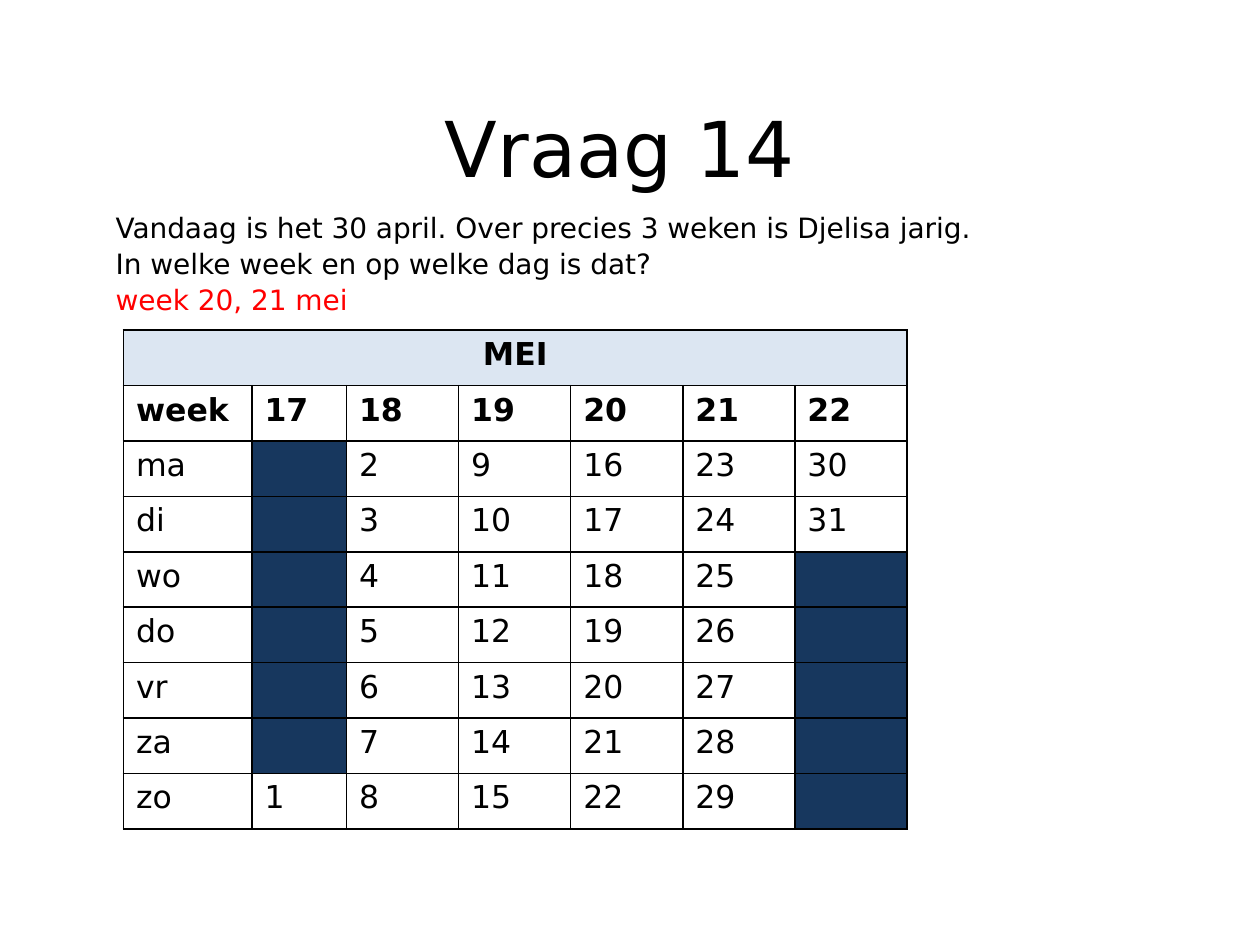
import pptx
import pptx.dml.color
import pptx.enum.shapes
import pptx.enum.text
import pptx.oxml
import pptx.oxml.ns
import pptx.util
from pptx.util import Inches

FONT = "DejaVu Sans"
BLACK, WHITE, RED = "000000", "FFFFFF", "FF0000"
HEADER_BLUE, BLOCKED_BLUE = "DCE6F2", "17375E"
CENTER = pptx.enum.text.PP_ALIGN.CENTER
DAYS = ["ma", "di", "wo", "do", "vr", "za", "zo"]
WEEKS = range(17, 23)
FIRST_MONDAY, FIRST_FULL_WEEK, MONTH_LENGTH = 2, 18, 31
COLUMN_WIDTHS = [1.02, 0.75] + [0.89] * 5
ROW_HEIGHT = 0.44


def color(hex_value):
    return pptx.dml.color.RGBColor.from_string(hex_value)


def apply(target, values):
    for name, value in values.items():
        setattr(target, name, value)


def write(paragraph, text, size, font_color=BLACK, bold=False, **formats):
    apply(paragraph, formats)
    run = paragraph.add_run()
    run.text = text
    apply(run.font, {"name": FONT, "size": pptx.util.Pt(size), "bold": bold})
    run.font.color.rgb = color(font_color)


def add_title(slide, text):
    box = slide.shapes.add_textbox(Inches(0.67), Inches(0.36), Inches(8.5), Inches(1.61))
    apply(box.text_frame, {
        "word_wrap": True,
        "vertical_anchor": pptx.enum.text.MSO_ANCHOR.MIDDLE,
    })
    write(box.text_frame.paragraphs[0], text, 44, alignment=CENTER)


def add_question(slide, lines):
    shape = slide.shapes.add_shape(
        pptx.enum.shapes.MSO_SHAPE.RECTANGLE,
        Inches(0.43), Inches(1.65), Inches(9.06), Inches(5.17))
    shape.shadow.inherit = False
    shape.line.fill.background()
    shape.fill.solid()
    shape.fill.fore_color.rgb = color(WHITE)
    fill_color = shape.fill._xPr.find(".//" + pptx.oxml.ns.qn("a:srgbClr"))
    fill_color.append(pptx.oxml.parse_xml(
        f'<a:alpha {pptx.oxml.ns.nsdecls("a")} val="76000"/>'))
    frame = shape.text_frame
    apply(frame, {"word_wrap": True, "vertical_anchor": pptx.enum.text.MSO_ANCHOR.TOP})
    for index, (text, font_color) in enumerate(lines):
        paragraph = frame.add_paragraph() if index else frame.paragraphs[0]
        properties = paragraph._p.get_or_add_pPr()
        properties.set("marL", str(Inches(0.21)))
        properties.set("indent", str(Inches(0.18)))
        write(paragraph, text, 16, font_color,
              alignment=pptx.enum.text.PP_ALIGN.LEFT, line_spacing=0.9,
              space_before=pptx.util.Pt(3.5 if index else 0))


def format_cell(cell, fill=None):
    properties = cell._tc.get_or_add_tcPr()
    for side in ("lnL", "lnR", "lnT", "lnB"):
        properties.append(pptx.oxml.parse_xml(
            f'<a:{side} {pptx.oxml.ns.nsdecls("a")} w="12700">'
            f'<a:solidFill><a:srgbClr val="{BLACK}"/></a:solidFill></a:{side}>'))
    if fill:
        cell.fill.solid()
        cell.fill.fore_color.rgb = color(fill)
    else:
        cell.fill.background()


def calendar_rows():
    rows = [["week"] + [str(week) for week in WEEKS]]
    for offset, day in enumerate(DAYS):
        dates = [FIRST_MONDAY + 7 * (week - FIRST_FULL_WEEK) + offset for week in WEEKS]
        rows.append([day] + [str(date) if 1 <= date <= MONTH_LENGTH else "" for date in dates])
    return rows


def add_calendar(slide, month):
    rows = calendar_rows()
    row_count = len(rows) + 1
    table = slide.shapes.add_table(
        row_count, len(COLUMN_WIDTHS), Inches(0.98), Inches(2.62),
        Inches(sum(COLUMN_WIDTHS)), Inches(ROW_HEIGHT * row_count)).table
    apply(table, {"first_row": False, "horz_banding": False})
    for column, width in zip(table.columns, COLUMN_WIDTHS):
        column.width = Inches(width)
    for row in table.rows:
        row.height = Inches(ROW_HEIGHT)
    for cell in table.rows[0].cells:
        format_cell(cell, HEADER_BLUE)
    header = table.cell(0, 0)
    header.merge(table.cell(0, len(COLUMN_WIDTHS) - 1))
    write(header.text_frame.paragraphs[0], month, 18, bold=True, alignment=CENTER)
    for row_index, texts in enumerate(rows, 1):
        for column_index, text in enumerate(texts):
            cell = table.cell(row_index, column_index)
            format_cell(cell, None if text else BLOCKED_BLUE)
            if text:
                write(cell.text_frame.paragraphs[0], text, 18, bold=row_index == 1)


def main():
    presentation = pptx.Presentation()
    apply(presentation, {"slide_width": Inches(10), "slide_height": Inches(7.5)})
    slide = presentation.slides.add_slide(presentation.slide_layouts[6])
    add_title(slide, "Vraag 14")
    add_question(slide, [
        ("Vandaag is het 30 april. Over precies 3 weken is Djelisa jarig.", BLACK),
        ("In welke week en op welke dag is dat?", BLACK),
        ("week 20, 21 mei", RED),
    ])
    add_calendar(slide, "MEI")
    presentation.save("out.pptx")


if __name__ == "__main__":
    main()
